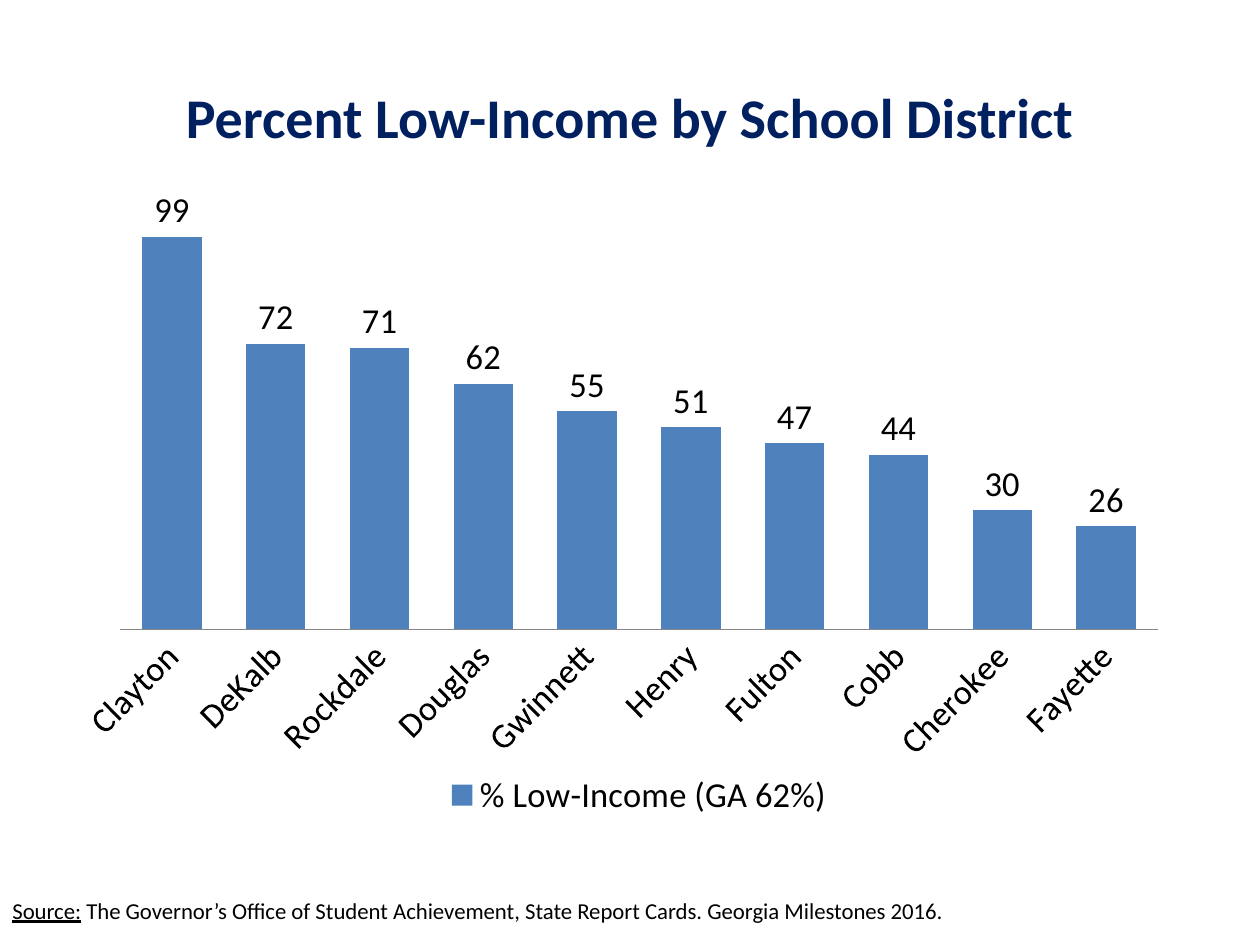
from lxml.etree import SubElement
from pptx import Presentation
from pptx.chart.data import CategoryChartData
from pptx.dml.color import RGBColor
from pptx.enum.chart import XL_CHART_TYPE, XL_LABEL_POSITION, XL_LEGEND_POSITION, XL_TICK_MARK
from pptx.enum.text import MSO_ANCHOR, PP_ALIGN
from pptx.oxml.ns import qn
from pptx.util import Cm, Pt

FONT = "Calibri"
LOW_INCOME = {
    "Clayton": 99, "DeKalb": 72, "Rockdale": 71, "Douglas": 62, "Gwinnett": 55,
    "Henry": 51, "Fulton": 47, "Cobb": 44, "Cherokee": 30, "Fayette": 26,
}


def color(hex_value):
    return RGBColor.from_string(hex_value)


def style_font(font, size, hex_value):
    font.name = FONT
    font.size = Pt(size)
    font.color.rgb = color(hex_value)


def add_run(paragraph, text, size, hex_value, bold=False, underline=False):
    run = paragraph.add_run()
    run.text = text
    style_font(run.font, size, hex_value)
    run.font.bold = bold
    run.font.underline = underline


def add_frame(slide, box):
    frame = slide.shapes.add_textbox(*map(Cm, box)).text_frame
    frame.word_wrap = True
    return frame


def add_heading(slide, box):
    heading = add_frame(slide, box)
    heading.vertical_anchor = MSO_ANCHOR.MIDDLE
    line = heading.paragraphs[0]
    line.alignment = PP_ALIGN.CENTER
    add_run(line, "Percent Low-Income by School District", 32, "002060", bold=True)


def add_source(slide, box):
    line = add_frame(slide, box).paragraphs[0]
    line.line_spacing = 0.6
    add_run(line, "Source:", 13, "000000", underline=True)
    add_run(line, " The Governor’s Office of Student Achievement, State Report Cards. "
            "Georgia Milestones 2016.", 13, "000000")


def set_plot_layout(chart, **fractions):
    plot_area = chart.plots[0]._element.getparent()
    layout = plot_area.find(qn("c:layout"))
    if layout is None:
        layout = SubElement(plot_area, qn("c:layout"))
        plot_area.insert(0, layout)
    manual = SubElement(layout, qn("c:manualLayout"))
    settings = {"layoutTarget": "inner", "xMode": "edge", "yMode": "edge", **fractions}
    for tag, value in settings.items():
        SubElement(manual, qn(f"c:{tag}")).set("val", str(value))


def add_district_chart(slide, box):
    districts = CategoryChartData(number_format="0")
    districts.categories = list(LOW_INCOME)
    districts.add_series("% Low-Income (GA 62%)", list(LOW_INCOME.values()))
    chart = slide.shapes.add_chart(
        XL_CHART_TYPE.COLUMN_CLUSTERED, *map(Cm, box), districts).chart
    chart.has_title = False
    style_font(chart.font, 20, "000000")
    set_plot_layout(chart, x=0.02, y=0, w=0.96, h=0.71)

    columns = chart.plots[0]
    columns.gap_width = 75
    columns.vary_by_categories = False
    fill = columns.series[0].format.fill
    fill.solid()
    fill.fore_color.rgb = color("4F81BD")

    columns.has_data_labels = True
    percents = columns.data_labels
    percents.show_value = True
    percents.number_format = "0"
    percents.number_format_is_linked = False
    percents.position = XL_LABEL_POSITION.OUTSIDE_END

    percent_axis = chart.value_axis
    percent_axis.minimum_scale = 0
    percent_axis.maximum_scale = 120
    percent_axis.has_major_gridlines = False
    percent_axis.visible = False

    district_axis = chart.category_axis
    district_axis.major_tick_mark = XL_TICK_MARK.NONE
    district_axis.format.line.color.rgb = color("868686")
    district_axis.format.line.width = Pt(0.75)
    style_font(district_axis.tick_labels.font, 20, "000000")
    body = district_axis._element.find(qn("c:txPr")).find(qn("a:bodyPr"))
    body.set("rot", "-2700000")

    chart.has_legend = True
    chart.legend.position = XL_LEGEND_POSITION.BOTTOM
    chart.legend.include_in_layout = False


def main():
    deck = Presentation()
    deck.slide_width = Cm(25.4)
    deck.slide_height = Cm(19.05)
    slide = deck.slides.add_slide(deck.slide_layouts[6])
    add_heading(slide, (1.27, 0.76, 22.86, 3.18))
    add_source(slide, (0, 18.14, 22.23, 0.58))
    add_district_chart(slide, (1.63, 3.1, 22.15, 13.51))
    deck.save("out.pptx")


if __name__ == "__main__":
    main()
